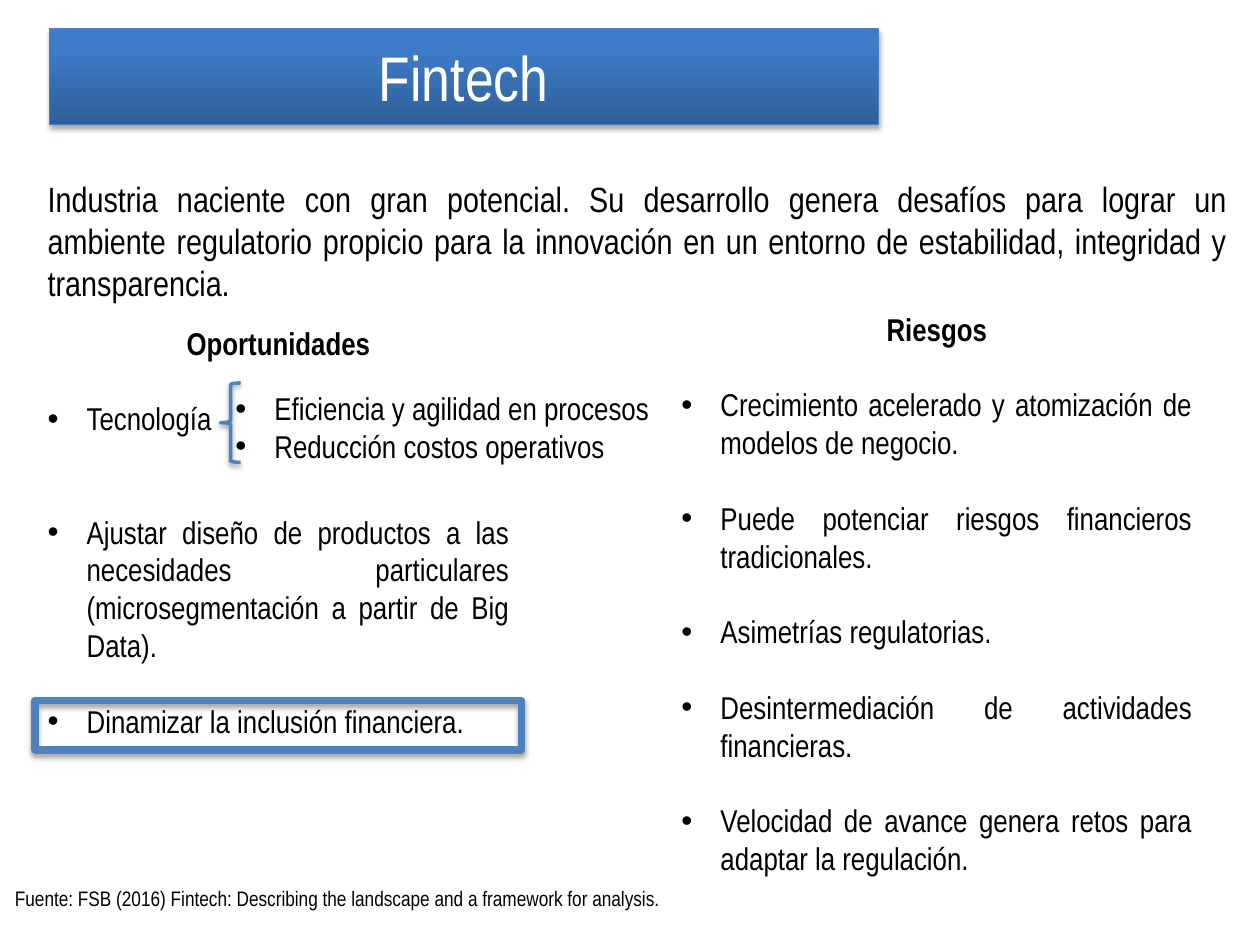
from copy import deepcopy

from lxml import etree
from pptx import Presentation
from pptx.dml.color import RGBColor
from pptx.enum.shapes import MSO_SHAPE
from pptx.enum.text import MSO_ANCHOR, MSO_AUTO_SIZE, PP_ALIGN
from pptx.oxml.ns import qn
from pptx.util import Inches, Pt

LEFT, CENTER, JUSTIFY = PP_ALIGN.LEFT, PP_ALIGN.CENTER, PP_ALIGN.JUSTIFY
RECTANGLE, LEFT_BRACE = MSO_SHAPE.RECTANGLE, MSO_SHAPE.LEFT_BRACE
FONT = "Arial Narrow"
LINE_HEIGHT = 21.6  # points taken by one line of 18-point text
BLUE = "4F81BD"


def rgb(value):
    return RGBColor.from_string(value)


def add_paragraph(frame, text, size=18, color="000000", bold=False,
                  align=JUSTIFY, bullet=False, gap=0):
    """Fill the first empty paragraph or add one; gap is in text lines."""
    paragraph = frame.paragraphs[0]
    if paragraph.runs:
        paragraph = frame.add_paragraph()
    paragraph.alignment = align
    if gap:
        paragraph.space_before = Pt(gap * LINE_HEIGHT)
    if bullet:
        properties = paragraph._p.get_or_add_pPr()
        properties.set("marL", str(Inches(0.31)))
        properties.set("indent", str(-Inches(0.31)))
        etree.SubElement(properties, qn("a:buFont"), typeface="Arial")
        etree.SubElement(properties, qn("a:buChar"), char="•")
    run = paragraph.add_run()
    run.text = text
    run.font.name = FONT
    run.font.size = Pt(size)
    run.font.bold = bold
    run.font.color.rgb = rgb(color)


def add_text_box(slide, left, top, width, height):
    box = slide.shapes.add_textbox(
        Inches(left), Inches(top), Inches(width), Inches(height))
    frame = box.text_frame
    frame.word_wrap = True
    frame.auto_size = MSO_AUTO_SIZE.SHAPE_TO_FIT_TEXT
    return frame


def add_list(slide, left, top, width, height, heading, items):
    """Add a centred heading and bulleted (text, gap) items."""
    frame = add_text_box(slide, left, top, width, height)
    add_paragraph(frame, heading, bold=True, align=CENTER)
    for text, gap in items:
        add_paragraph(frame, text, bullet=True, gap=gap)


def add_shadow(shape, opacity, distance):
    shape.shadow.inherit = False
    effects = shape._element.spPr.find(qn("a:effectLst"))
    shadow = etree.SubElement(
        effects, qn("a:outerShdw"), blurRad=str(Pt(3.1)),
        dist=str(Pt(distance)), dir="5400000", rotWithShape="0")
    color = etree.SubElement(shadow, qn("a:srgbClr"), val="000000")
    etree.SubElement(color, qn("a:alpha"), val=str(opacity * 1000))


def add_outline(slide, kind, left, top, width, height, color=BLUE,
                line_width=2, opacity=35, distance=1.8):
    """Add an unfilled shape with a coloured line and a soft shadow."""
    shape = slide.shapes.add_shape(
        kind, Inches(left), Inches(top), Inches(width), Inches(height))
    shape.fill.background()
    shape.line.color.rgb = rgb(color)
    shape.line.width = Pt(line_width)
    add_shadow(shape, opacity, distance)
    return shape


def fill_gradient(shape, stops):
    """Fill from bottom to top with (position, colour) stops."""
    shape.fill.gradient()
    shape.fill.gradient_angle = 90
    stop_list = shape._element.spPr.find(qn("a:gradFill")).find(qn("a:gsLst"))
    while len(stop_list) < len(stops):
        stop_list.append(deepcopy(stop_list[-1]))
    for stop, (position, color) in zip(shape.fill.gradient_stops, stops):
        stop.position = position
        stop.color.rgb = rgb(color)


def add_title(slide, text):
    banner = add_outline(slide, RECTANGLE, 0.39, 0.23, 6.58, 0.76,
                         color="4B7EBC", line_width=0.75)
    fill_gradient(banner, [(0, "2F5F99"), (0.8, "3D7CC7"), (1, "3A7CCB")])
    banner.text_frame.word_wrap = True
    banner.text_frame.vertical_anchor = MSO_ANCHOR.MIDDLE
    add_paragraph(banner.text_frame, text, size=36, color="FFFFFF",
                  align=CENTER)


def main():
    presentation = Presentation()
    presentation.slide_width = Inches(10)
    presentation.slide_height = Inches(7.5)
    slide = presentation.slides.add_slide(presentation.slide_layouts[6])

    add_title(slide, "Fintech")
    introduction = add_text_box(slide, 0.28, 1.36, 9.56, 1.11)
    add_paragraph(
        introduction,
        "Industria naciente con gran potencial. Su desarrollo genera desafíos "
        "para lograr un ambiente regulatorio propicio para la innovación en "
        "un entorno de estabilidad, integridad y transparencia.", size=20)
    source = add_text_box(slide, 0.02, 6.98, 9.47, 0.3)
    add_paragraph(
        source, "Fuente: FSB (2016) Fintech: Describing the landscape and a "
        "framework for analysis.", size=12, align=LEFT)

    add_list(slide, 0.28, 2.52, 3.86, 3.43, "Oportunidades", [
        ("Tecnología", 1),
        ("Ajustar diseño de productos a las necesidades particulares "
         "(microsegmentación a partir de Big Data).", 2),
        ("Dinamizar la inclusión financiera.", 1),
    ])
    risks = [
        "Crecimiento acelerado y atomización de modelos de negocio.",
        "Puede potenciar riesgos financieros tradicionales.",
        "Asimetrías regulatorias.",
        "Desintermediación de actividades financieras.",
        "Velocidad de avance genera retos para adaptar la regulación.",
    ]
    add_list(slide, 5.31, 2.41, 4.25, 5.25, "Riesgos",
             [(risk, 1) for risk in risks])

    technology = add_text_box(slide, 1.77, 3.04, 3.54, 0.71)
    for benefit in ("Eficiencia y agilidad en procesos",
                    "Reducción costos operativos"):
        add_paragraph(technology, benefit, bullet=True)

    add_outline(slide, RECTANGLE, 0.28, 5.56, 3.86, 0.39, line_width=4.5)
    add_outline(slide, LEFT_BRACE, 1.75, 3.04, 0.16, 0.63,
                opacity=38, distance=1.6)
    presentation.save("out.pptx")


if __name__ == "__main__":
    main()
